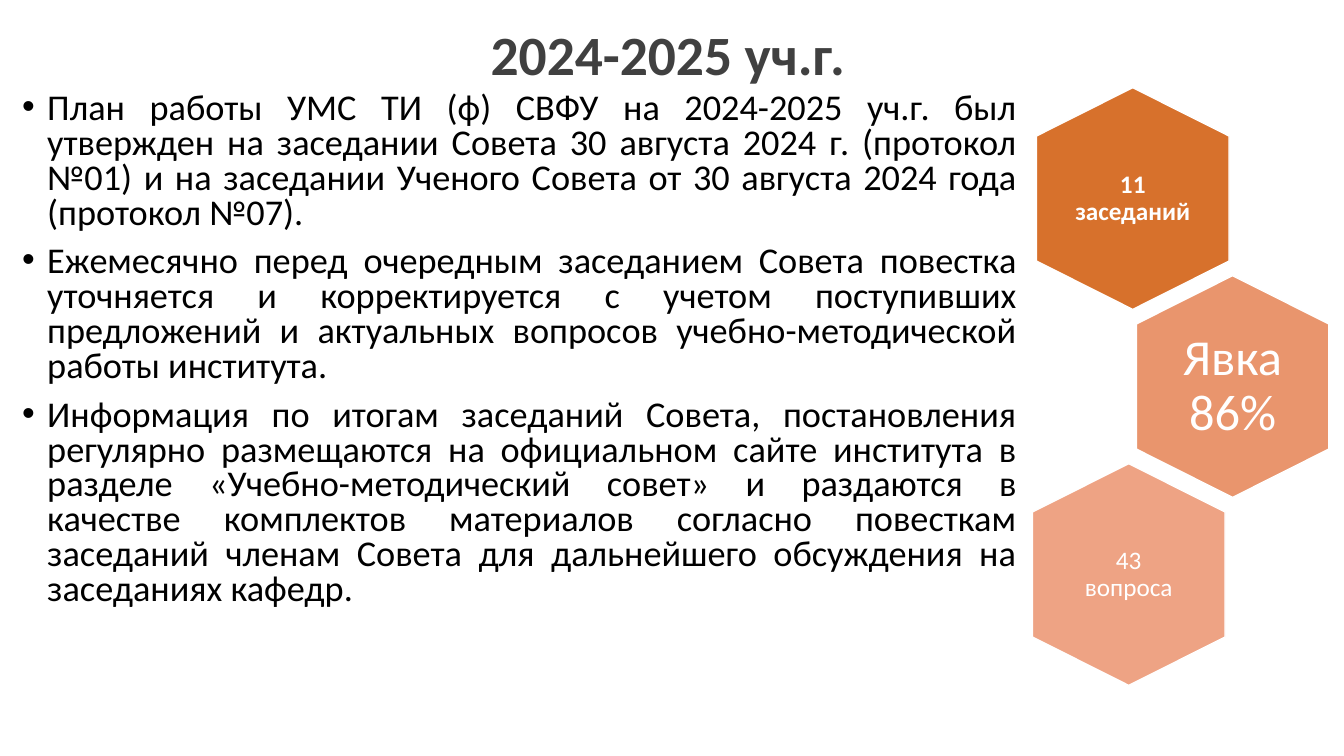
"""Builds the slide on the 2024-2025 work of the teaching council."""
from dataclasses import dataclass

from lxml import etree
from pptx import Presentation, util as u
from pptx.dml.color import RGBColor
from pptx.enum import text as t
from pptx.oxml.ns import qn

WIDTH, HEIGHT = u.Inches(13.33), u.Inches(7.5)
FONT = "Calibri"
HEX_WIDTH, HEX_HEIGHT = 1.91, 2.2
FIRST_TOP, ROW_STEP = 0.87, 1.865
HEX_OUTLINE = [(0.5, 0), (1, 0.218), (1, 0.782), (0.5, 1), (0, 0.782), (0, 0.218)]


@dataclass(frozen=True)
class Result:
    label: str
    left: float
    fill: str
    size: int
    side_inset: float
    end_inset: float
    bold: bool = False


RESULTS = [
    Result("11 заседаний", 10.28, "D7712C", 18, 0.37, 0.42, bold=True),
    Result("Явка 86%", 11.27, "E9956D", 36, 0.3, 0.34),
    Result("43 вопроса", 10.24, "EEA384", 18, 0.37, 0.42),
]

REPORT = [
    "План работы УМС ТИ (ф) СВФУ на 2024-2025 уч.г. был утвержден на заседании Совета "
    "30 августа 2024 г. (протокол №01) и на заседании Ученого Совета от 30 августа "
    "2024 года (протокол №07).",
    "Ежемесячно перед очередным заседанием Совета повестка уточняется и корректируется "
    "с учетом поступивших предложений и актуальных вопросов учебно-методической работы "
    "института.",
    "Информация по итогам заседаний Совета, постановления регулярно размещаются на "
    "официальном сайте института в разделе «Учебно-методический совет» и раздаются в "
    "качестве комплектов материалов согласно повесткам заседаний членам Совета для "
    "дальнейшего обсуждения на заседаниях кафедр.",
]


def color(code: str) -> RGBColor:
    return RGBColor.from_string(code)


def style(paragraph, size: float, code: str, align, spacing: float, bold: bool = False) -> None:
    paragraph.alignment = align
    paragraph.line_spacing = spacing
    font = paragraph.font
    font.name, font.size, font.bold = FONT, u.Pt(size), bold
    font.color.rgb = color(code)


def add_bullet(paragraph) -> None:
    properties = paragraph._p.get_or_add_pPr()
    properties.set("marL", str(u.Inches(0.25)))
    properties.set("indent", str(-u.Inches(0.25)))
    etree.SubElement(properties, qn("a:buFont"), typeface="Arial")
    etree.SubElement(properties, qn("a:buChar"), char="•")


def add_text_frame(slide, left: float, top: float, width: float, height: float, anchor):
    """Adds a wrapping text box placed by shares of the slide's size."""
    box = slide.shapes.add_textbox(
        int(WIDTH * left), int(HEIGHT * top), int(WIDTH * width), int(HEIGHT * height)
    )
    frame = box.text_frame
    frame.word_wrap = True
    frame.vertical_anchor = anchor
    return frame


def draw_result(slide, result: Result, row: int) -> None:
    top = FIRST_TOP + row * ROW_STEP
    corners = [
        (u.Inches(result.left + x * HEX_WIDTH), u.Inches(top + y * HEX_HEIGHT))
        for x, y in HEX_OUTLINE
    ]
    builder = slide.shapes.build_freeform(*corners[0])
    builder.add_line_segments(corners[1:], close=True)
    hexagon = builder.convert_to_shape()
    hexagon.shadow.inherit = False
    hexagon.fill.solid()
    hexagon.fill.fore_color.rgb = color(result.fill)
    hexagon.line.color.rgb = color("FFFFFF")
    hexagon.line.width = u.Pt(1)
    frame = hexagon.text_frame
    frame.word_wrap = True
    frame.vertical_anchor = t.MSO_ANCHOR.MIDDLE
    frame.margin_left = frame.margin_right = u.Inches(result.side_inset)
    frame.margin_top = frame.margin_bottom = u.Inches(result.end_inset)
    label = frame.paragraphs[0]
    label.text = result.label
    style(label, result.size, "FFFFFF", t.PP_ALIGN.CENTER, 0.9, result.bold)


def draw_heading(slide) -> None:
    frame = add_text_frame(slide, 0.047, 0.036, 0.9, 0.08, t.MSO_ANCHOR.MIDDLE)
    heading = frame.paragraphs[0]
    heading.text = "2024-2025 уч.г."
    style(heading, 39.6, "404040", t.PP_ALIGN.CENTER, 0.9, bold=True)


def draw_report(slide) -> None:
    frame = add_text_frame(slide, 0.009, 0.116, 0.755, 0.775, t.MSO_ANCHOR.TOP)
    for index, statement in enumerate(REPORT):
        item = frame.add_paragraph() if index else frame.paragraphs[0]
        item.text = statement
        add_bullet(item)
        style(item, 25.9, "000000", t.PP_ALIGN.JUSTIFY, 0.8)
        if index:
            item.space_before = u.Pt(10)


def main() -> None:
    deck = Presentation()
    deck.slide_width, deck.slide_height = WIDTH, HEIGHT
    slide = deck.slides.add_slide(deck.slide_layouts[6])
    for row, result in enumerate(RESULTS):
        draw_result(slide, result, row)
    draw_heading(slide)
    draw_report(slide)
    deck.save("out.pptx")


if __name__ == "__main__":
    main()
